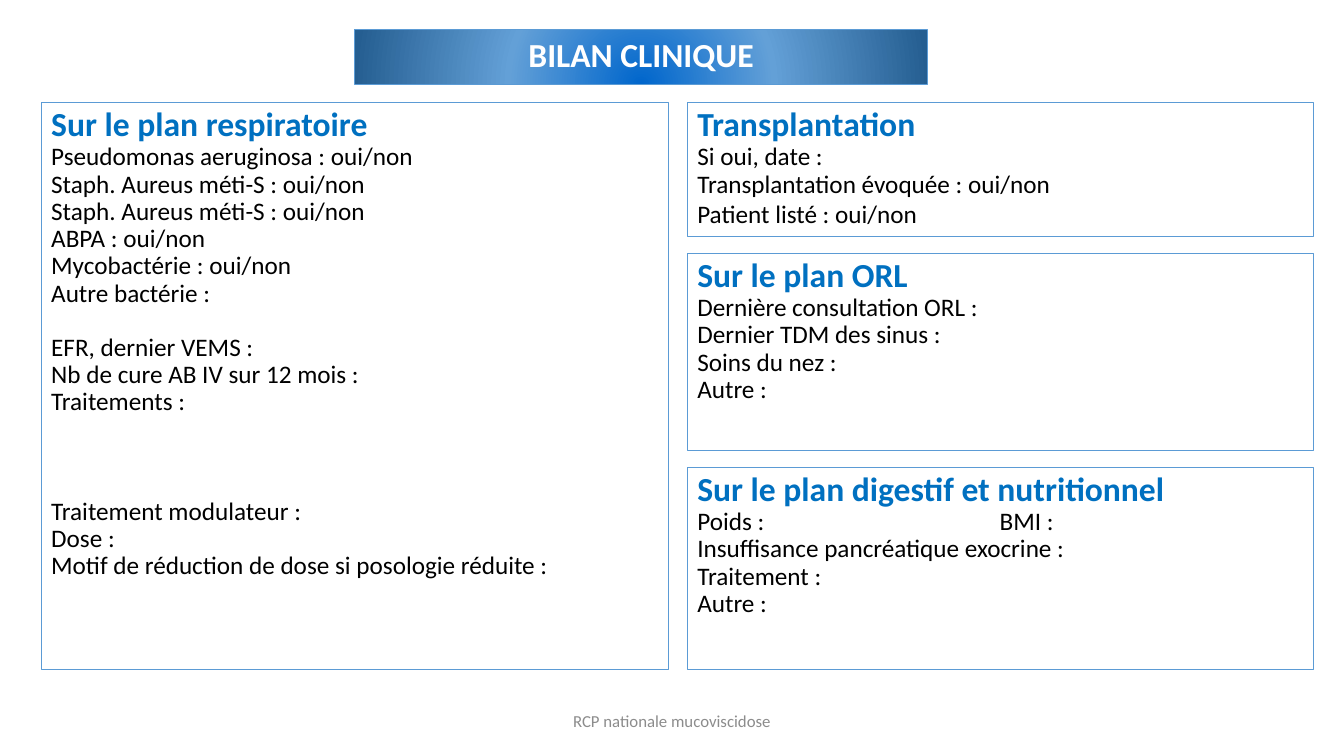
"""Build the clinical summary slide, "BILAN CLINIQUE"."""
from dataclasses import dataclass

from lxml.etree import SubElement
from pptx import Presentation
from pptx.dml.color import RGBColor
from pptx.enum.shapes import MSO_SHAPE as SHAPE
from pptx.enum.text import MSO_ANCHOR as ANCHOR, MSO_AUTO_SIZE as AUTOSIZE, PP_ALIGN as ALIGN
from pptx.oxml import parse_xml
from pptx.oxml.ns import nsdecls, qn
from pptx.util import Pt

FONT = "Calibri"
BORDER, HEADING, BLACK, WHITE, GREY = "5B9BD5", "0070C0", "000000", "FFFFFF", "8C8C8C"
BANNER_STOPS = ((0, "0066CC"), (46, "63A0D7"), (100, "255E91"))
TOP, GAP, TAB = 73.5, 12.25, 216
LEFT_X, LEFT_W, LEFT_H = 29.5, 448, 404.5
RIGHT_X, RIGHT_W = 491, 447


@dataclass
class Line:
    text: str
    before: float = 0


@dataclass
class Panel:
    heading: str
    height: float
    lines: list[Line]


RESPIRATORY = Panel("Sur le plan respiratoire", LEFT_H, [
    Line("Pseudomonas aeruginosa : oui/non"),
    Line("Staph. Aureus méti-S : oui/non"),
    Line("Staph. Aureus méti-S : oui/non"),
    Line("ABPA : oui/non"),
    Line("Mycobactérie : oui/non"),
    Line("Autre bactérie :"),
    Line("EFR, dernier VEMS :", 19.5),
    Line("Nb de cure AB IV sur 12 mois :"),
    Line("Traitements :"),
    Line("Traitement modulateur :", 58.5),
    Line("Dose :"),
    Line("Motif de réduction de dose si posologie réduite :"),
])
RIGHT_PANELS = [
    Panel("Transplantation", 95.5, [
        Line("Si oui, date :"),
        Line("Transplantation évoquée : oui/non"),
        Line("Patient listé : oui/non", 2),
    ]),
    Panel("Sur le plan ORL", 140.5, [
        Line("Dernière consultation ORL :"),
        Line("Dernier TDM des sinus :"),
        Line("Soins du nez :"),
        Line("Autre :"),
    ]),
    Panel("Sur le plan digestif et nutritionnel", 144, [
        Line("Poids :\tBMI :"),
        Line("Insuffisance pancréatique exocrine :"),
        Line("Traitement :"),
        Line("Autre :"),
    ]),
]


def color(value: str) -> RGBColor:
    return RGBColor.from_string(value)


def add_run(p, text: str, size: float, value: str, bold: bool = False) -> None:
    r = p.add_run()
    r.text = text
    r.font.name, r.font.size, r.font.bold = FONT, Pt(size), bold
    r.font.color.rgb = color(value)


def set_frame(tf, anchor: ANCHOR) -> None:
    tf.word_wrap, tf.auto_size, tf.vertical_anchor = True, AUTOSIZE.NONE, anchor
    tf.margin_left = tf.margin_right = Pt(7.2)
    tf.margin_top = tf.margin_bottom = Pt(3.6)


def set_border(sp) -> None:
    sp.line.color.rgb = color(BORDER)
    sp.line.width = Pt(0.75)


def add_tab_stop(p, position: float) -> None:
    tabs = SubElement(p._p.get_or_add_pPr(), qn("a:tabLst"))
    SubElement(tabs, qn("a:tab"), pos=str(Pt(position)), algn="l")


def add_panel(s, panel: Panel, x: float, y: float, width: float) -> None:
    sp = s.shapes.add_shape(SHAPE.RECTANGLE, Pt(x), Pt(y), Pt(width), Pt(panel.height))
    sp.shadow.inherit = False
    sp.fill.background()
    set_border(sp)
    tf = sp.text_frame
    set_frame(tf, ANCHOR.TOP)
    p = tf.paragraphs[0]
    p.alignment, p.line_spacing = ALIGN.LEFT, 0.9
    add_run(p, panel.heading, 24, HEADING, True)
    for line in panel.lines:
        p = tf.add_paragraph()
        p.alignment, p.line_spacing, p.space_before = ALIGN.LEFT, 0.9, Pt(line.before)
        if "\t" in line.text:
            add_tab_stop(p, TAB)
        add_run(p, line.text, 18, BLACK)


def fill_radial(sp, stops: tuple[tuple[int, str], ...]) -> None:
    sp.fill.background()
    gs = "".join(f'<a:gs pos="{pos * 1000}"><a:srgbClr val="{value}"/></a:gs>'
                 for pos, value in stops)
    grad = parse_xml(
        f'<a:gradFill {nsdecls("a")} rotWithShape="1"><a:gsLst>{gs}</a:gsLst>'
        '<a:path path="circle"><a:fillToRect l="50000" t="130000" r="50000" b="-30000"/>'
        '</a:path></a:gradFill>')
    sp_pr = sp._element.spPr
    sp_pr.replace(sp_pr.find(qn("a:noFill")), grad)


def format_banner(sp, text: str) -> None:
    sp.left, sp.top, sp.width, sp.height = Pt(253.5), Pt(21), Pt(409), Pt(39.5)
    fill_radial(sp, BANNER_STOPS)
    set_border(sp)
    set_frame(sp.text_frame, ANCHOR.MIDDLE)
    p = sp.text_frame.paragraphs[0]
    p.alignment, p.line_spacing = ALIGN.CENTER, 0.9
    add_run(p, text, 24, WHITE, True)


def add_footer(s, text: str) -> None:
    sp = s.shapes.add_textbox(Pt(318), Pt(500.5), Pt(324), Pt(29))
    set_frame(sp.text_frame, ANCHOR.MIDDLE)
    p = sp.text_frame.paragraphs[0]
    p.alignment = ALIGN.CENTER
    add_run(p, text, 12, GREY)


def main() -> None:
    prs = Presentation()
    prs.slide_width, prs.slide_height = Pt(960), Pt(540)
    s = prs.slides.add_slide(prs.slide_layouts.get_by_name("Title Only"))
    format_banner(s.shapes.title, "BILAN CLINIQUE")
    add_panel(s, RESPIRATORY, LEFT_X, TOP, LEFT_W)
    y = TOP
    for panel in RIGHT_PANELS:
        add_panel(s, panel, RIGHT_X, y, RIGHT_W)
        y += panel.height + GAP
    add_footer(s, "RCP nationale mucoviscidose")
    prs.save("out.pptx")


if __name__ == "__main__":
    main()
